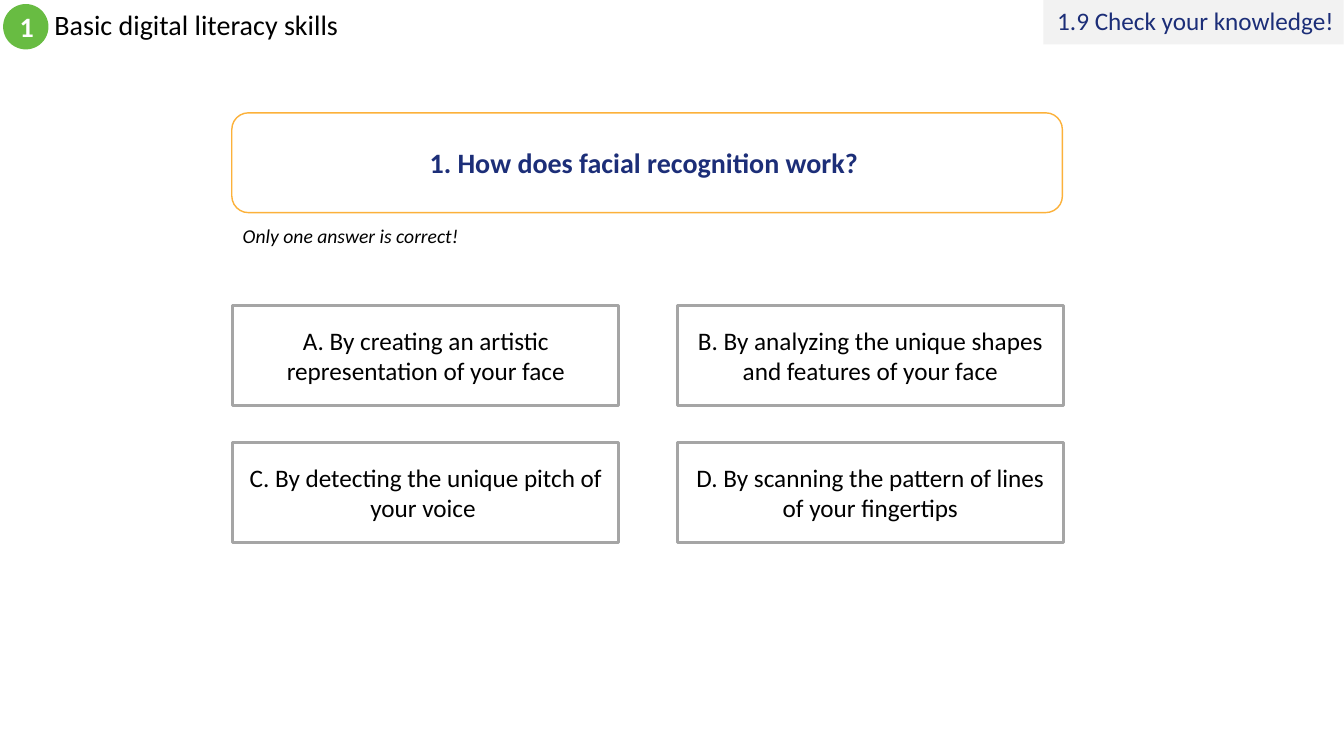
"""Build a quiz slide with one question and four answer boxes."""
from pptx import Presentation
from pptx.dml.color import RGBColor
from pptx.enum import shapes, text
from pptx.util import Pt

WHITE = RGBColor(0xFF, 0xFF, 0xFF)
BLACK = RGBColor(0x00, 0x00, 0x00)
NAVY = RGBColor(0x1C, 0x2E, 0x78)
GREEN = RGBColor(0x68, 0xBC, 0x42)
ORANGE = RGBColor(0xFC, 0xB1, 0x3A)
GRAY = RGBColor(0xA5, 0xA5, 0xA5)
PALE = RGBColor(0xF2, 0xF2, 0xF2)

SHAPE = shapes.MSO_SHAPE
ALIGN = text.PP_ALIGN
ANCHOR = text.MSO_ANCHOR

ANSWERS = (
    "A. By creating an artistic representation of your face",
    "B. By analyzing the unique shapes and features of your face",
    "C. By detecting the unique pitch of your voice ",
    "D. By scanning the pattern of lines of your fingertips",
)


def set_all(target, values):
    """Set every attribute named in values on target."""
    for name, value in values.items():
        setattr(target, name, value)


def write(holder, wording, size, color, align=ALIGN.CENTER,
          anchor=ANCHOR.MIDDLE, spacing=1.0, **style):
    """Put one formatted paragraph into a shape, text box or placeholder."""
    frame = holder.text_frame
    set_all(frame, {
        "word_wrap": True, "auto_size": text.MSO_AUTO_SIZE.NONE,
        "vertical_anchor": anchor,
        "margin_left": Pt(7.2), "margin_right": Pt(7.2),
        "margin_top": Pt(3.6), "margin_bottom": Pt(3.6),
    })
    paragraph = frame.paragraphs[0]
    set_all(paragraph, {"alignment": align, "line_spacing": spacing})
    run = paragraph.add_run()
    run.text = wording
    set_all(run.font, {"name": "Calibri", "size": Pt(size), **style})
    run.font.color.rgb = color


def add_panel(slide, kind, place, fill, outline=None, width=1):
    """Add a filled shape, with an outline if a colour is given."""
    panel = slide.shapes.add_shape(kind, *map(Pt, place))
    panel.shadow.inherit = False
    panel.fill.solid()
    panel.fill.fore_color.rgb = fill
    if outline is None:
        panel.line.fill.background()
    else:
        panel.line.color.rgb = outline
        panel.line.width = Pt(width)
    return panel


def add_heading(slide):
    """Place the module title, its number and the section tag."""
    places = zip(("left", "top", "width", "height"), (31.7, 2.9, 576, 32.4))
    set_all(slide.shapes.title, {side: Pt(value) for side, value in places})
    write(slide.shapes.title, "Basic digital literacy skills", 20, BLACK,
          ALIGN.LEFT, spacing=0.9)
    module = add_panel(slide, SHAPE.OVAL, (2.2, 2.9, 32.4, 32.4), GREEN)
    write(module, "1", 20, WHITE, bold=True)
    section = add_panel(slide, SHAPE.RECTANGLE, (745.2, 0, 214.6, 31.7), PALE)
    write(section, "1.9 Check your knowledge! ", 18, NAVY, ALIGN.RIGHT,
          spacing=0.9)


def add_question(slide):
    """Add the question box and the hint below it."""
    question = add_panel(slide, SHAPE.ROUNDED_RECTANGLE,
                         (165.6, 80.6, 593.3, 71.3), WHITE, ORANGE)
    write(question, "1. How does facial recognition work? ", 20, NAVY,
          bold=True)
    hint = slide.shapes.add_textbox(*map(Pt, (166.3, 156.2, 169.9, 24.5)))
    write(hint, "Only one answer is correct!", 14, BLACK, ALIGN.LEFT,
          ANCHOR.TOP, italic=True)


def add_answers(slide):
    """Lay the answers out in two columns."""
    for index, wording in enumerate(ANSWERS):
        row, column = divmod(index, 2)
        place = (166.3 + 317.5 * column, 218.2 + 98 * row, 275.8, 71.3)
        answer = add_panel(slide, SHAPE.RECTANGLE, place, WHITE, GRAY, 2)
        write(answer, wording, 18, BLACK)


def main():
    """Build the slide and save the file."""
    deck = Presentation()
    set_all(deck, {"slide_width": Pt(960), "slide_height": Pt(540)})
    slide = deck.slides.add_slide(deck.slide_layouts[5])
    add_heading(slide)
    add_question(slide)
    add_answers(slide)
    deck.save("out.pptx")


if __name__ == "__main__":
    main()
